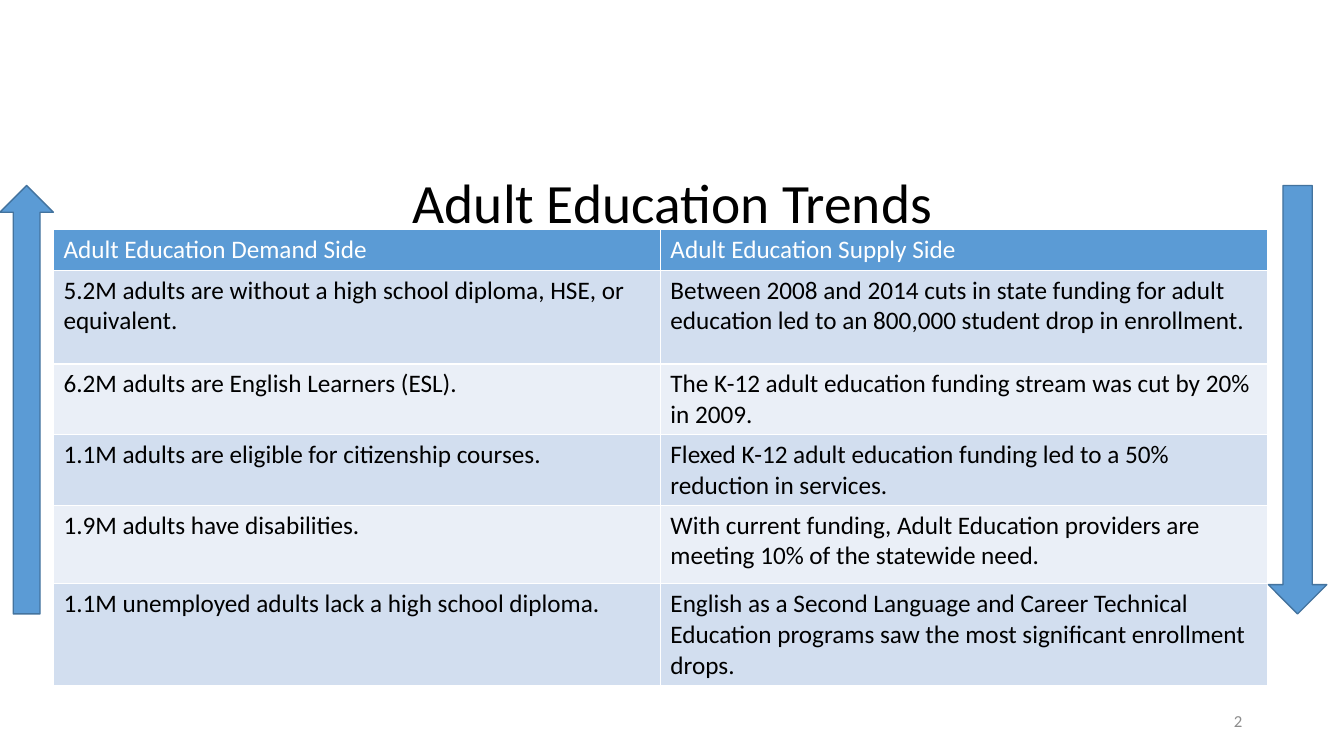
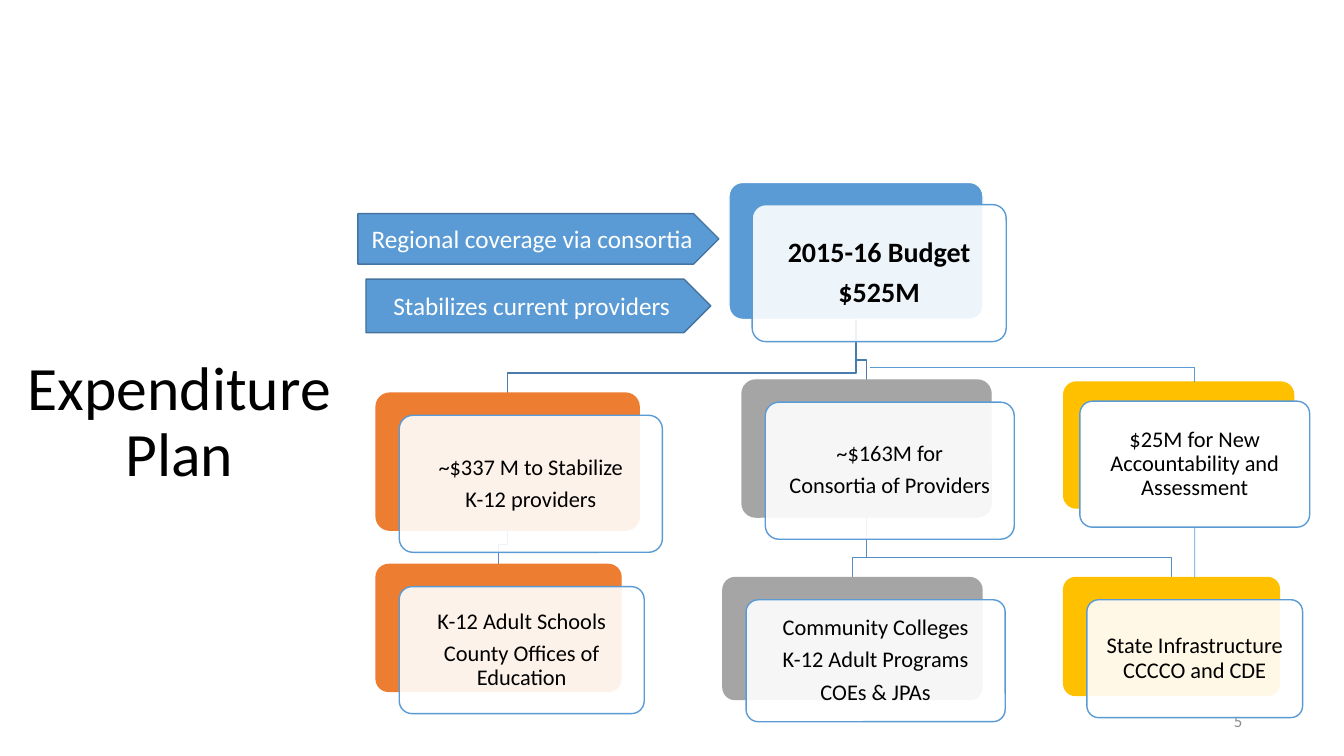
from dataclasses import dataclass

from lxml.etree import SubElement
from pptx import Presentation
from pptx.dml.color import RGBColor
from pptx.enum.shapes import MSO_CONNECTOR, MSO_SHAPE
from pptx.enum.text import MSO_ANCHOR, MSO_AUTO_SIZE, PP_ALIGN
from pptx.oxml.ns import qn
from pptx.util import Inches, Pt

WHITE = RGBColor(0xFF, 0xFF, 0xFF)
BLACK = RGBColor(0x00, 0x00, 0x00)
GREY = RGBColor(0x8C, 0x8C, 0x8C)
BLUE = RGBColor(0x5B, 0x9B, 0xD5)
BLUE_EDGE = RGBColor(0x43, 0x73, 0x9E)
ORANGE = RGBColor(0xED, 0x7D, 0x31)
SILVER = RGBColor(0xA5, 0xA5, 0xA5)
GOLD = RGBColor(0xFF, 0xC0, 0x00)
BRANCH_TOP = RGBColor(0x49, 0x7C, 0xAB)
BRANCH_LOW = RGBColor(0x53, 0x8D, 0xC1)
BANDS = (RGBColor(0xD2, 0xDE, 0xEF), RGBColor(0xEA, 0xEF, 0xF7))
FONT = "Calibri"

TRENDS = (
    ("Adult Education Demand Side", "Adult Education Supply Side"),
    ("5.2M adults are without a high school diploma, HSE, or equivalent.",
     "Between 2008 and 2014 cuts in state funding for adult education led to an "
     "800,000 student drop in enrollment."),
    ("6.2M adults are English Learners (ESL).",
     "The K-12 adult education funding stream was cut by 20% in 2009."),
    ("1.1M adults are eligible for citizenship courses.",
     "Flexed K-12 adult education funding led to a 50% reduction in services."),
    ("1.9M adults have disabilities.",
     "With current funding, Adult Education providers are meeting 10% of the "
     "statewide need."),
    ("1.1M unemployed adults lack a high school diploma.",
     "English as a Second Language and Career Technical Education programs saw "
     "the most significant enrollment drops."),
)
ROW_HEIGHTS = (0.37, 0.93, 0.65, 0.65, 0.78, 1.01)


@dataclass(frozen=True)
class Card:
    """A coloured plate with a translucent text panel offset over it."""
    x: float
    y: float
    w: float
    h: float
    color: RGBColor
    lines: tuple[str, ...]
    edge: RGBColor | None = None
    size: float = 16
    bold: bool = False
    dx: float = 0.23
    dy: float = 0.22
    alpha: int = 90

    @property
    def mid(self) -> float:
        """Return the horizontal centre of the plate."""
        return self.x + self.w / 2


BUDGET = Card(7.23, 1.81, 2.52, 1.36, BLUE, ("2015-16 Budget", "$525M"),
              edge=WHITE, size=20, bold=True)
STABILIZE = Card(3.73, 3.9, 2.61, 1.36, ORANGE,
                 ("~$337 M to Stabilize", "K-12 providers"))
SCHOOLS = Card(3.73, 5.6, 2.43, 1.26, ORANGE,
               ("K-12 Adult Schools", "County Offices of Education"))
CONSORTIA = Card(7.36, 3.77, 2.47, 1.36, SILVER,
                 ("~$163M for", "Consortia of Providers"))
COLLEGES = Card(7.17, 5.73, 2.57, 1.21, SILVER,
                ("Community Colleges", "K-12 Adult Programs", "COEs & JPAs"))
STATE = Card(10.55, 5.73, 2.14, 1.17, GOLD,
             ("State Infrastructure CCCCO and CDE",))
ASSESSMENT = Card(10.55, 3.79, 2.28, 1.25, GOLD,
                  ("$25M for New Accountability and Assessment",),
                  dx=0.16, dy=0.19, alpha=100)
BRANCHES = (
    (CONSORTIA, STATE, BRANCH_LOW),
    (CONSORTIA, COLLEGES, BRANCH_LOW),
    (BUDGET, CONSORTIA, BRANCH_TOP),
    (STABILIZE, SCHOOLS, BRANCH_LOW),
    (BUDGET, STABILIZE, BRANCH_TOP),
)


def write(tf, *lines: str, size: float, color: RGBColor = BLACK,
          bold: bool = False, align=PP_ALIGN.CENTER, anchor=MSO_ANCHOR.MIDDLE,
          spacing: float = 1, after: float = 0) -> None:
    """Fill a text frame with one formatted paragraph per line."""
    tf.word_wrap = True
    tf.vertical_anchor = anchor
    for i, line in enumerate(lines):
        p = tf.paragraphs[0] if i == 0 else tf.add_paragraph()
        p.alignment = align
        p.line_spacing = spacing
        p.space_before = Pt(0)
        p.space_after = Pt(after)
        r = p.add_run()
        r.text = line
        r.font.name = FONT
        r.font.size = Pt(size)
        r.font.bold = bold
        r.font.color.rgb = color


def add_slide(prs, title: str, box: tuple[float, ...], size: float, number: str):
    """Add a slide with its title and slide number."""
    s = prs.slides.add_slide(prs.slide_layouts[5])
    sp = s.shapes.title
    sp.left, sp.top, sp.width, sp.height = map(Inches, box)
    sp.text_frame.auto_size = MSO_AUTO_SIZE.NONE
    write(sp.text_frame, title, size=size, spacing=0.9)
    sp = s.shapes.add_textbox(Inches(9.42), Inches(6.95), Inches(3), Inches(0.4))
    write(sp.text_frame, number, size=12, color=GREY, align=PP_ALIGN.RIGHT)
    return s


def add_box(s, kind, x: float, y: float, w: float, h: float,
            fill: RGBColor = BLUE, edge: RGBColor = BLUE_EDGE):
    """Add a filled and outlined preset shape."""
    sp = s.shapes.add_shape(kind, Inches(x), Inches(y), Inches(w), Inches(h))
    sp.shadow.inherit = False
    sp.fill.solid()
    sp.fill.fore_color.rgb = fill
    sp.line.color.rgb = edge
    sp.line.width = Pt(1)
    return sp


def add_card(s, card: Card):
    """Draw a card and return its front panel."""
    back = add_box(s, MSO_SHAPE.ROUNDED_RECTANGLE, card.x, card.y, card.w, card.h,
                   card.color, card.edge or card.color)
    front = add_box(s, MSO_SHAPE.ROUNDED_RECTANGLE, card.x + card.dx,
                    card.y + card.dy, card.w, card.h, WHITE, BLUE)
    back.adjustments[0] = front.adjustments[0] = 0.1
    if card.alpha < 100:
        color = front.fill._xPr.find(qn("a:solidFill"))[0]
        SubElement(color, qn("a:alpha")).set("val", str(card.alpha * 1000))
    tf = front.text_frame
    tf.margin_left = tf.margin_right = Inches(0.11)
    tf.margin_top = tf.margin_bottom = Inches(0.11)
    write(tf, *card.lines, size=card.size, bold=card.bold, spacing=0.9,
          after=0.35 * card.size)
    return front


def add_branch(s, parent: Card, child: Card, color: RGBColor) -> None:
    """Draw a bent line from the foot of one plate to the top of another."""
    bend = child.y - 0.2
    points = ((parent.mid, bend), (child.mid, bend), (child.mid, child.y))
    fb = s.shapes.build_freeform(Inches(parent.mid), Inches(parent.y + parent.h))
    fb.add_line_segments([(Inches(x), Inches(y)) for x, y in points], close=False)
    sp = fb.convert_to_shape()
    sp.shadow.inherit = False
    sp.fill.background()
    sp.line.color.rgb = color
    sp.line.width = Pt(1)


def add_line(s, x1: float, y1: float, x2: float, y2: float):
    """Add a thin straight connector."""
    ln = s.shapes.add_connector(MSO_CONNECTOR.STRAIGHT, Inches(x1), Inches(y1),
                                Inches(x2), Inches(y2))
    ln.line.color.rgb = BLUE
    ln.line.width = Pt(0.5)
    SubElement(ln._element.spPr, qn("a:effectLst"))
    return ln


def build_trends(prs) -> None:
    """Build the demand and supply table between two arrows."""
    s = add_slide(prs, "Adult Education Trends", (0.92, 1.67, 11.5, 0.74), 39.6, "2")
    table = s.shapes.add_table(len(TRENDS), 2, Inches(0.53), Inches(2.28),
                               Inches(12.04), Inches(sum(ROW_HEIGHTS))).table
    for i, (texts, height) in enumerate(zip(TRENDS, ROW_HEIGHTS)):
        table.rows[i].height = Inches(height)
        for j, text in enumerate(texts):
            cell = table.cell(i, j)
            cell.fill.solid()
            cell.fill.fore_color.rgb = BANDS[(i - 1) % 2] if i else BLUE
            write(cell.text_frame, text, size=18, color=BLACK if i else WHITE,
                  align=PP_ALIGN.LEFT, anchor=MSO_ANCHOR.TOP)
    add_box(s, MSO_SHAPE.DOWN_ARROW, 12.58, 1.84, 0.58, 4.25)
    add_box(s, MSO_SHAPE.UP_ARROW, 0, 1.84, 0.53, 4.25)


def build_plan(prs) -> None:
    """Build the budget tree with its two pointers."""
    s = add_slide(prs, "Expenditure Plan", (0.16, 1.94, 3.24, 4.52), 44, "5")
    for branch in BRANCHES:
        add_branch(s, *branch)
    for card in (BUDGET, STABILIZE, SCHOOLS, CONSORTIA, COLLEGES, STATE):
        add_card(s, card)
    for text, box in (("Stabilizes current providers", (3.63, 2.77, 3.42, 0.53)),
                      ("Regional coverage via consortia", (3.55, 2.12, 3.58, 0.5))):
        sp = add_box(s, MSO_SHAPE.PENTAGON, *box)
        write(sp.text_frame, text, size=18, color=WHITE)
    panel = add_card(s, ASSESSMENT)
    add_line(s, 11.85, 5.23, 11.85, 5.73).begin_connect(panel, 2)
    add_line(s, 11.85, 3.64, 8.63, 3.64)
    add_line(s, 11.85, 3.64, 11.85, 3.79)


def main() -> None:
    """Build and save the presentation."""
    prs = Presentation()
    prs.slide_width, prs.slide_height = Inches(13.33), Inches(7.5)
    build_trends(prs)
    build_plan(prs)
    prs.save("out.pptx")


if __name__ == "__main__":
    main()
